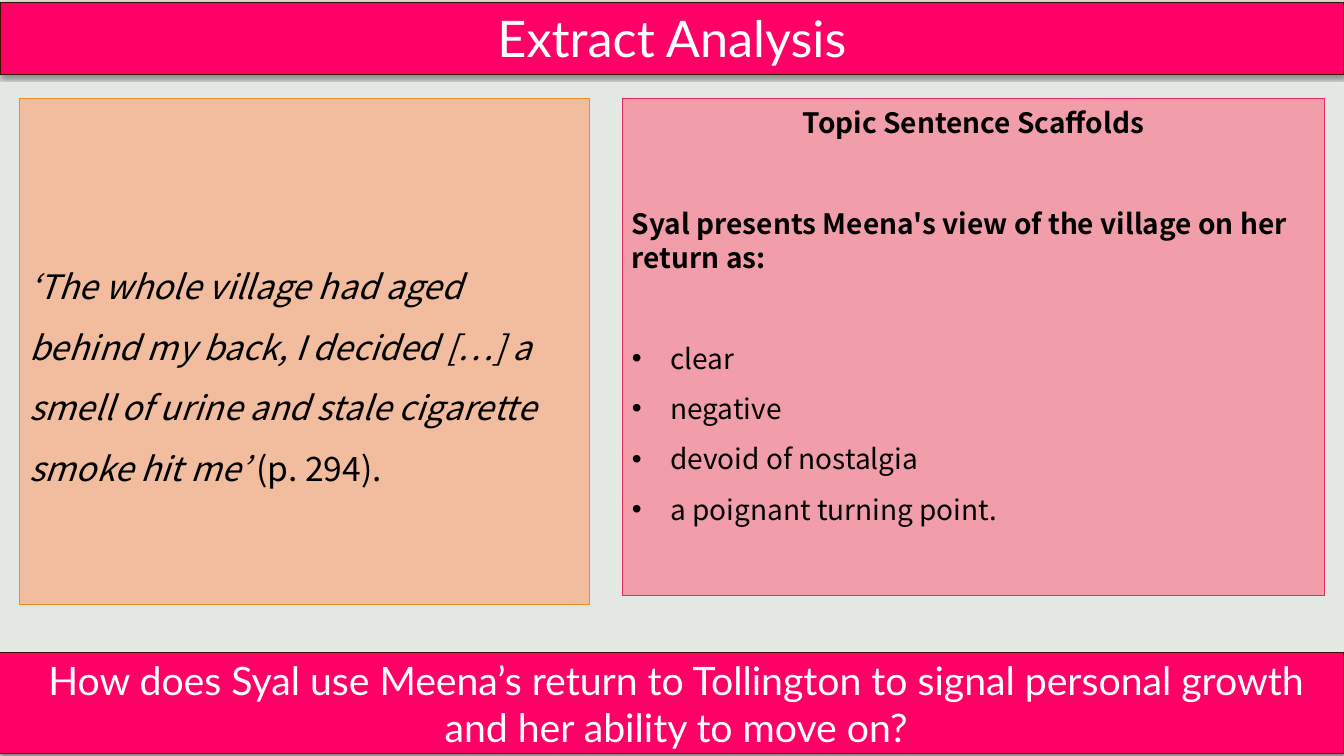
"""Build the extract analysis slide: two bars, a quotation and topic sentence scaffolds."""
from lxml import etree
from pptx import Presentation
from pptx.dml.color import RGBColor
from pptx.enum.shapes import MSO_SHAPE
from pptx.enum.text import MSO_ANCHOR, MSO_AUTO_SIZE, PP_ALIGN
from pptx.oxml.ns import qn
from pptx.util import Inches, Pt

RECT = MSO_SHAPE.RECTANGLE
TOP, MIDDLE = MSO_ANCHOR.TOP, MSO_ANCHOR.MIDDLE
LEFT, CENTER = PP_ALIGN.LEFT, PP_ALIGN.CENTER
NO_FIT = MSO_AUTO_SIZE.NONE

COLORS = {
    "back": "E3E8E2", "bar": "FF0066", "edge": "3C1301", "white": "FFFFFF",
    "black": "000000", "peach": "F1BD9E", "orange": "E78F29",
    "pink": "F19EAA", "rose": "E72961",
}
BAR_FONT, BODY_FONT = "Lato", "Noto Sans CJK JP"
WIDTH, HEIGHT = 13.33, 7.5
PANEL_TOP, INDENT = 0.98, 0.38

TITLE = "Extract Analysis"
QUESTION = ("How does Syal use Meena’s return to Tollington to signal "
            "personal growth and her ability to move on?")
QUOTE = ("‘The whole village had aged behind my back, I decided […] "
         "a smell of urine and stale cigarette smoke hit me’ ")
PAGE = "(p. 294)."
HEADING = "Topic Sentence Scaffolds"
STEM = "Syal presents Meena's view of the village on her return as:"
ENDINGS = ["clear", "negative", "devoid of nostalgia", "a poignant turning point."]


def rgb(name):
    return RGBColor.from_string(COLORS[name])


def style(shape, box, fill, line, anchor, inset=(0.1, 0.05)):
    """Place and paint a box, and return its text frame."""
    shape.left, shape.top, shape.width, shape.height = map(Inches, box)
    shape.fill.solid()
    shape.fill.fore_color.rgb = rgb(fill)
    shape.line.color.rgb = rgb(line)
    shape.line.width = Pt(0.75)
    shape.shadow.inherit = False
    frame = shape.text_frame
    frame.word_wrap = True
    frame.auto_size = NO_FIT
    frame.vertical_anchor = anchor
    frame.margin_left, frame.margin_top = map(Inches, inset)
    frame.margin_right, frame.margin_bottom = Inches(0.1), Inches(0.05)
    return frame


def cast(shape):
    """Add a soft shadow below a bar."""
    effects = shape._element.spPr.find(qn("a:effectLst"))
    shadow = etree.SubElement(effects, qn("a:outerShdw"), blurRad=str(Pt(3.1)),
                              dist=str(Pt(1.6)), dir="5400000", rotWithShape="0")
    color = etree.SubElement(shadow, qn("a:srgbClr"), val=COLORS["black"])
    etree.SubElement(color, qn("a:alpha"), val="38000")


def write(para, text, size, font, color, bold=False, italic=False):
    run = para.add_run()
    run.text = text
    run.font.name, run.font.size = font, Pt(size)
    run.font.bold, run.font.italic = bold, italic
    run.font.color.rgb = rgb(color)


def bullet(para):
    props = para._p.get_or_add_pPr()
    props.set("marL", str(Inches(INDENT)))
    props.set("indent", str(-Inches(INDENT)))
    etree.SubElement(props, qn("a:buFont"), typeface="Arial")
    etree.SubElement(props, qn("a:buChar"), char="•")


def main():
    deck = Presentation()
    deck.slide_width, deck.slide_height = Inches(WIDTH), Inches(HEIGHT)
    slide = deck.slides.add_slide(deck.slide_layouts[5])
    slide.background.fill.solid()
    slide.background.fill.fore_color.rgb = rgb("back")

    def rect():
        return slide.shapes.add_shape(RECT, 0, 0, 0, 0)

    bars = [
        (slide.shapes.title, 0.02, 0.72, TOP, 0.1, TITLE, 36),
        (rect(), 6.47, 1.01, MIDDLE, 0.18, QUESTION, 28),
    ]
    for shape, top, height, anchor, inset, text, size in bars:
        frame = style(shape, (0, top, WIDTH, height), "bar", "edge", anchor, (inset, 0.05))
        cast(shape)
        para = frame.paragraphs[0]
        para.alignment = CENTER
        write(para, text, size, BAR_FONT, "white")

    frame = style(rect(), (0.19, PANEL_TOP, 5.66, 5.02), "peach", "orange", MIDDLE, (0.1, 0.35))
    para = frame.paragraphs[0]
    para.alignment, para.line_spacing = LEFT, 1.5
    write(para, QUOTE, 24, BODY_FONT, "black", italic=True)
    write(para, PAGE, 24, BODY_FONT, "black")

    frame = style(rect(), (6.17, PANEL_TOP, 6.97, 4.93), "pink", "rose", TOP, (0.1, 0.07))
    lines = [(HEADING, CENTER, 0, 1, True), (STEM, LEFT, 48, 1, True)]
    lines += [(text, LEFT, 0 if i else 36, 1.5, False) for i, text in enumerate(ENDINGS)]
    for i, (text, align, gap, pitch, bold) in enumerate(lines):
        para = frame.add_paragraph() if i else frame.paragraphs[0]
        para.alignment, para.line_spacing = align, pitch
        if gap:
            para.space_before = Pt(gap)
        if not bold:
            bullet(para)
        write(para, text, 20, BODY_FONT, "black", bold)

    deck.save("out.pptx")


if __name__ == "__main__":
    main()
